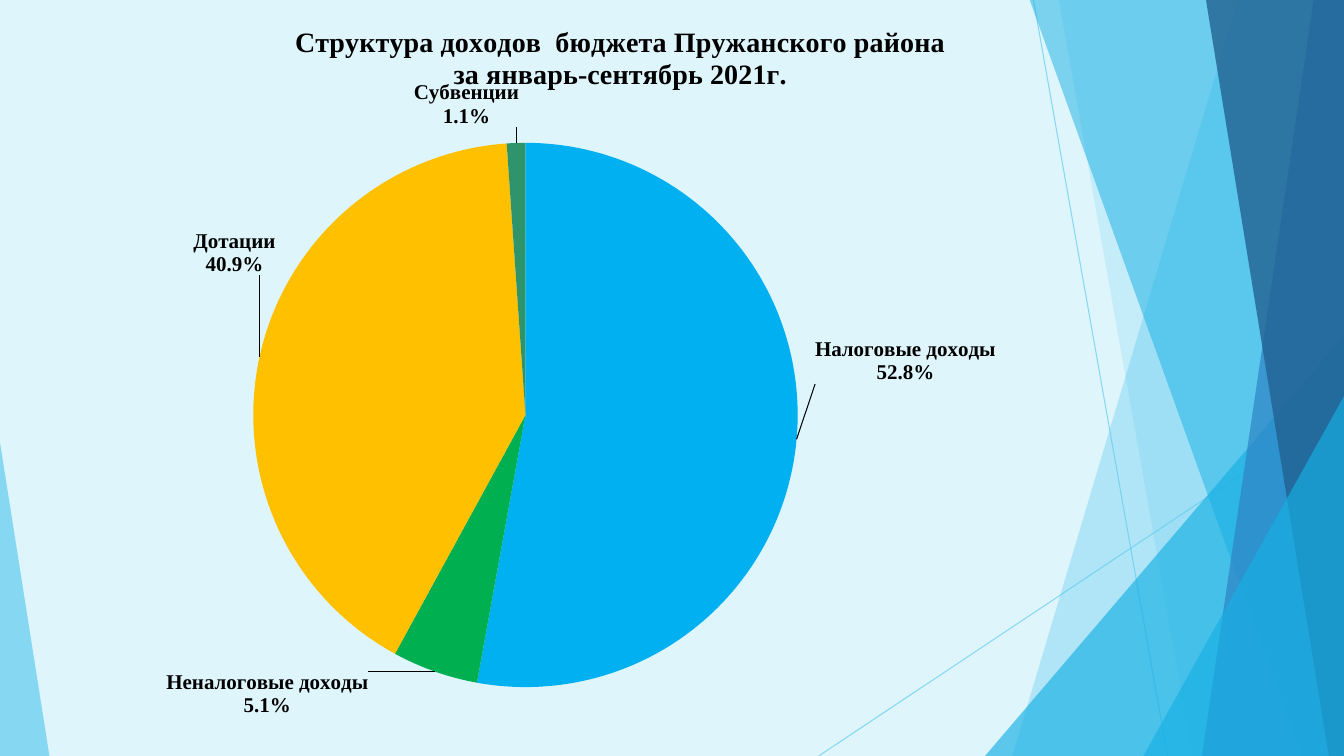
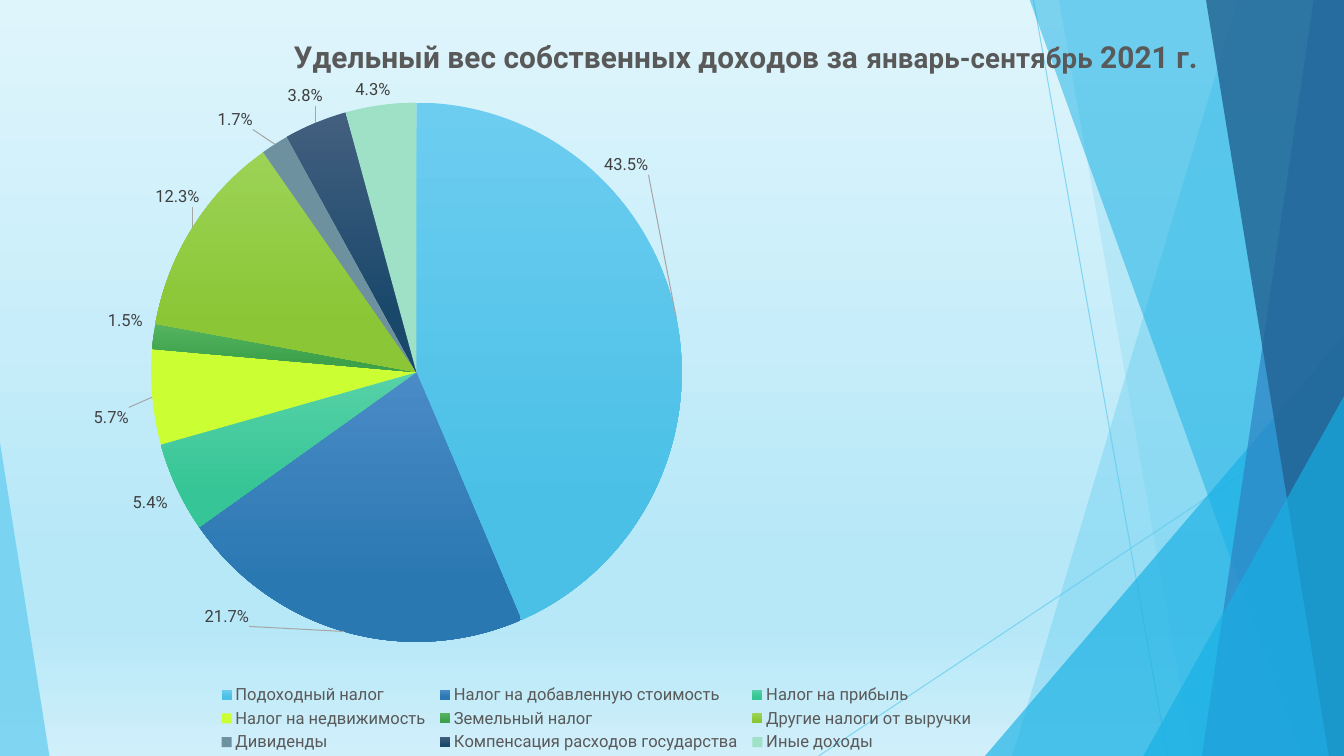
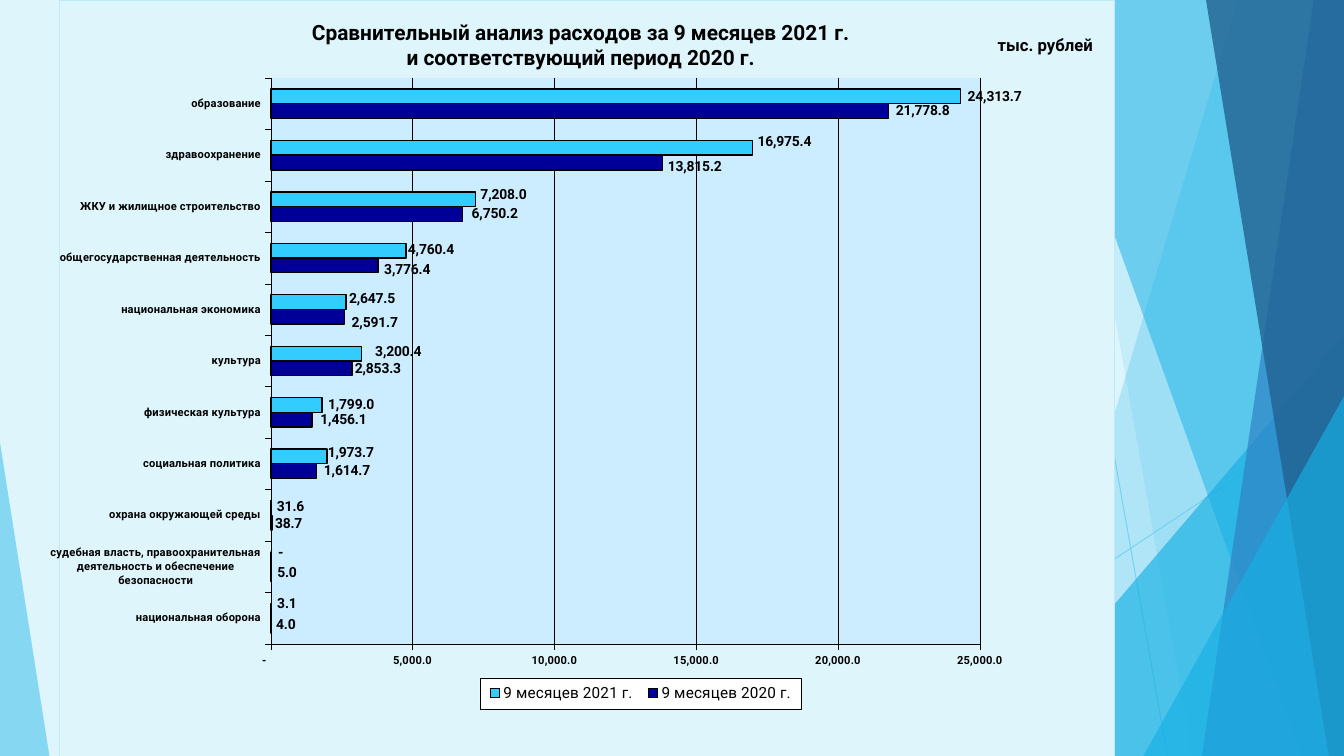
import copy
from itertools import cycle

from lxml import etree
from pptx import Presentation, util as u
from pptx.chart.data import CategoryChartData
from pptx.dml.color import RGBColor
from pptx.enum import chart as ce, shapes as se
from pptx.oxml.ns import qn

WIDE, HIGH = 13.33, 7.5
SANS, SERIF = "Roboto", "Times New Roman"
BLACK, GREY, DARK = "000000", "595959", "404040"
PALE, SKY, AQUA, BLUE, NAVY = "DFF5FC", "5FCBEF", "17B0E4", "2E83C3", "226292"
MONEY = '_(* #,##0.0_);_(* \\(#,##0.0\\);_(* "-"??_);_(@_)'
SHARE = '0.0"%"'

# top left, top right, bottom right, bottom left; colour, opacity
BANDS = [
    ((12.28, WIDE, WIDE, 10.04), SKY, 36),
    ((10.5, WIDE, WIDE, 11.83), SKY, 20),
    ((9.77, 3.33), AQUA, 66),
    ((10.21, WIDE, WIDE, 12.91), AQUA, 50),
    ((13.03, WIDE, WIDE, 11.92), BLUE, 70),
    ((11.96, WIDE, WIDE, 13.18), NAVY, 80),
    ((11.34, 3.93), AQUA, 66),
]
RAYS = [(10.25, 0, 11.58, HIGH), (WIDE, 4.03, 8.12, HIGH)]


def rgb(code):
    return RGBColor.from_string(code)


def inch(*nums):
    return [u.Inches(n) for n in nums]


def add(parent, tag, at=None, **attrs):
    node = etree.Element(qn(tag), {k: str(v) for k, v in attrs.items()})
    parent.insert(len(parent) if at is None else at, node)
    return node


def paint(fill, tone, root):
    """Fill with one colour, or with (position, colour) stops from top down."""
    if isinstance(tone, str):
        fill.solid()
        fill.fore_color.rgb = rgb(tone)
        return
    fill.gradient()
    fill.gradient_angle = 270
    stops = list(root.iter(qn("a:gsLst")))[-1]
    for old in list(stops):
        stops.remove(old)
    for pos, code in tone:
        stop = add(stops, "a:gs", pos=pos * 1000)
        add(stop, "a:srgbClr", val=code)


def fade(shape, part):
    tint = next(shape._element.spPr.iter(qn("a:srgbClr")))
    add(tint, "a:alpha", val=part * 1000)


def style(font, size=None, tone=BLACK, bold=False, face=SANS):
    font.name, font.bold = face, bold
    font.color.rgb = rgb(tone)
    if size:
        font.size = u.Pt(size)


def write(frame, words, size, **form):
    """Lines split at newline, runs at |; run sizes take turns."""
    sizes = cycle(size if isinstance(size, tuple) else (size,))
    for i, line in enumerate(words.split("\n")):
        para = frame.add_paragraph() if i else frame.paragraphs[0]
        for bit in line.split("|"):
            run = para.add_run()
            run.text = bit
            style(run.font, next(sizes), **form)


def place(node, at, mode="edge", **box):
    """Give a chart part a manual layout in shares of the chart."""
    for old in node.findall(qn("c:layout")):
        node.remove(old)
    spot = add(add(node, "c:layout", at), "c:manualLayout")
    if at == 0:
        add(spot, "c:layoutTarget", val="inner")
    if mode == "edge":
        for key in "xy":
            add(spot, f"c:{key}Mode", val="edge")
    for key, val in box.items():
        add(spot, f"c:{key}", val=val)


def box_look(after, fill, line=None):
    look = etree.Element(qn("c:spPr"))
    after.addnext(look)
    add(add(look, "a:solidFill"), "a:srgbClr", val=fill)
    edge = add(look, "a:ln", w=3175)
    if line:
        add(add(edge, "a:solidFill"), "a:srgbClr", val=line)
    else:
        add(edge, "a:noFill")


def decor(slide):
    for ray in RAYS:
        line = slide.shapes.add_connector(se.MSO_CONNECTOR.STRAIGHT, *inch(*ray))
        line.line.color.rgb = rgb(SKY)
        line.line.width = u.Pt(0.75)
        fade(line, 70)
        add(line._element.spPr, "a:effectLst")
    for edge, tone, part in BANDS:
        if len(edge) == 2:
            left, top = edge
            wedge(slide, (left, top, WIDE - left, HIGH - top), 1, tone, part)
            continue
        pts = [inch(x, y) for x, y in zip(edge, (-0.01, -0.01, HIGH, HIGH))]
        form = slide.shapes.build_freeform(*pts[0])
        form.add_line_segments(pts[1:], close=True)
        tint(form.convert_to_shape(), tone, part)
    wedge(slide, (0, 4.39, 0.49, 3.11), 0, SKY, 70)


def wedge(slide, box, tip, tone, part):
    shape = slide.shapes.add_shape(se.MSO_SHAPE.ISOSCELES_TRIANGLE, *inch(*box))
    shape.adjustments[0] = tip
    tint(shape, tone, part)


def tint(shape, tone, part):
    shape.shadow.inherit = False
    shape.line.fill.background()
    paint(shape.fill, tone, shape._element)
    fade(shape, part)


def page(deck, back):
    slide = deck.slides.add_slide(deck.slide_layouts[6])
    paint(slide.background.fill, back, slide._element)
    decor(slide)
    return slide


def graph(slide, kind, box, cats, rows, plot, face=SANS):
    data = CategoryChartData()
    data.categories = cats
    for name, vals in rows:
        data.add_series(name, vals)
    chart = slide.shapes.add_chart(kind, *inch(*box), data).chart
    style(chart.font, 12, face=face)
    chart.has_legend = False
    area = chart._chartSpace.chart.plotArea
    place(area, 0, **dict(zip("xywh", plot)))
    return chart


def title(owner, words, size, x, y, **form):
    write(owner.text_frame, words, size, bold=True, **form)
    place(owner._element, 1, x=x, y=y)


def legend(chart, spot, box, size, tone):
    chart.has_legend = True
    key = chart.legend
    key.position, key.include_in_layout = spot, False
    style(key.font, size, tone)
    place(key._element, 1, **dict(zip("xywh", box)))
    return key


def labels(ser, form, moves, lead=None, names=False, **look):
    """Label a series; moves are thousandths of the chart from the usual spot."""
    tags = ser.data_labels
    tags.number_format, tags.number_format_is_linked = form, False
    tags.position = ce.XL_LABEL_POSITION.OUTSIDE_END
    tags.show_value, tags.show_category_name = True, names
    style(tags.font, **look)
    root = tags._element
    show = root.find(qn("c:showLeaderLines"))
    if show is None:
        show = add(root, "c:showLeaderLines")
    show.set("val", "1" if lead else "0")
    if names:
        gap = etree.Element(qn("c:separator"))
        gap.text = "\n"
        show.addprevious(gap)
    parts = [n for n in root if n is not show]
    if lead:
        edge = add(add(add(root, "c:leaderLines"), "c:spPr"), "a:ln", w=9525)
        add(add(edge, "a:solidFill"), "a:srgbClr", val=lead)
    for i, (dx, dy) in enumerate(moves):
        tag = add(root, "c:dLbl", i)
        add(tag, "c:idx", val=i)
        tag.extend(copy.deepcopy(parts))
        if dx or dy:
            place(tag, 1, "factor", x=dx / 1000, y=dy / 1000)


def pie(slide, box, rows, plot, face=SANS, **look):
    """Rows hold name, value, colour and label move."""
    cats, vals, tones, moves = zip(*rows)
    chart = graph(slide, ce.XL_CHART_TYPE.PIE, box, cats, [("Series 1", vals)], plot, face)
    chart.plots[0].vary_by_categories = True
    ser = chart.plots[0].series[0]
    for i, tone in enumerate(tones):
        form = ser.points[i].format
        paint(form.fill, tone, ser._element)
        form.line.fill.background()
    labels(ser, SHARE, moves, face=face, **look)
    chart.has_title = True
    return chart


def income(deck):
    rows = [
        ("Налоговые доходы", 52.8, "00B0F0", (11, -135)),
        ("Неналоговые доходы", 5.1, "00B050", (-56, -9)),
        ("Дотации", 40.9, "FFC000", (19, -106)),
        ("Субвенции", 1.1, "2E946B", (-43, -13)),
    ]
    chart = pie(page(deck, PALE), (0.5, 0, 11.41, HIGH), rows,
                (0.141, 0.189, 0.544, 0.72), SERIF,
                lead=BLACK, names=True, size=15, bold=True)
    title(chart.chart_title, "Структура доходов  бюджета Пружанского района\n"
          "за январь-сентябрь 2021г.", 20, 0.21, 0.03, face=SERIF)


def taxes(deck):
    def mix(top, low):
        return [(0, top), (78, low)]

    rows = [
        ("Подоходный налог", 43.5, mix("6CCDF0", "4BC0E6"), (-66, -189)),
        ("Налог на добавленную стоимость", 21.7, mix("4A8BC6", "2A78B2"), (-79, -41)),
        ("Налог на прибыль", 5.4, mix("56D2A7", "36C596"), (-3, 4)),
        ("Налог на недвижимость", 5.7, "CCFF33", (-15, 13)),
        ("Земельный налог", 1.5, mix("56B461", "3CA14A"), (-4, -6)),
        ("Другие налоги от выручки", 12.3, mix("9CD356", "8AC635"), (10, -23)),
        ("Дивиденды", 1.7, "6E91A0", (-16, -13)),
        ("Компенсация расходов государства", 3.8, mix("435F7F", "19486B"), (8, -15)),
        ("Иные доходы", 4.3, "9FE1C6", (9, 1)),
    ]
    back = [(0, PALE), (74, "B7E8F8"), (83, "B7E8F8"), (100, "CFEFFA")]
    chart = pie(page(deck, back), (0, 0.05, 11.91, 7.45), rows,
                (0.116, 0.13, 0.473, 0.718), lead="A6A6A6", size=12, tone=DARK)
    title(chart.chart_title, "Удельный вес собственных доходов за |январь-сентябрь |2021 г.",
          (21.6, 20, 21.6), 0.246, 0.04, tone=GREY)
    legend(chart, ce.XL_LEGEND_POSITION.BOTTOM, (0.18, 0.9, 0.65, 0.1), 12, GREY)


def spending(deck):
    # name, 2020, 2021, label moves for 2020 and 2021
    rows = [
        ("национальная оборона", 4, 3.1, (-2, -1), (-1, -9)),
        ("судебная власть, правоохранительная деятельность и обеспечение безопасности",
         5, 0, (-1, -2), (0, -9)),
        ("охрана окружающей среды", 38.7, 31.6, (-4, 1), (-2, -2)),
        ("социальная политика", 1614.7, 1973.7, (0, 0), (-6, -5)),
        ("физическая культура", 1456.1, 1799, (1, 0), (-1, -1)),
        ("культура", 2853.3, 3200.4, (-4, 1), (6, -2)),
        ("национальная экономика", 2591.7, 2647.5, (0, 8), (-4, -4)),
        ("общегосударственная деятельность", 3776.4, 4760.4, (-1, 6), (-5, -1)),
        ("ЖКУ и жилищное строительство", 6750.2, 7208, (2, 0), (-2, -6)),
        ("здравоохранение", 13815.2, 16975.4, (-2, 5), (-2, -8)),
        ("образование", 21778.8, 24313.7, (0, 0), (0, 0)),
    ]
    cats, old, new, *moves = zip(*rows)
    years = [("9 месяцев 2020 г.", old), ("9 месяцев 2021 г.", new)]
    chart = graph(page(deck, PALE), ce.XL_CHART_TYPE.BAR_CLUSTERED, (0.5, 0, 10.55, HIGH),
                  cats, years, (0.201, 0.103, 0.672, 0.749))
    plot = chart.plots[0]
    plot.gap_width, plot.overlap, plot.vary_by_categories = 150, 0, False
    for ser, tone, move in zip(plot.series, ("000099", "33CCFF"), moves):
        paint(ser.format.fill, tone, ser._element)
        ser.format.line.color.rgb = rgb(BLACK)
        ser.format.line.width = u.Pt(1)
        labels(ser, MONEY, move, size=10, bold=True)

    scale = chart.value_axis
    scale.minimum_scale, scale.maximum_scale, scale.major_unit = 0, 25000, 5000
    scale.has_major_gridlines = True
    for axis in (scale, chart.category_axis):
        axis.major_tick_mark = ce.XL_TICK_MARK.OUTSIDE
        style(axis.tick_labels.font, 8, bold=True)
    for part in (scale, chart.category_axis, scale.major_gridlines):
        part.format.line.color.rgb = rgb(BLACK)
        part.format.line.width = u.Pt(0.25)
    ticks = scale.tick_labels
    ticks.number_format, ticks.number_format_is_linked = MONEY, False

    chart.has_title = scale.has_title = True
    title(chart.chart_title, "Сравнительный анализ расходов за 9 месяцев 2021 г.\n"
          "и соответствующий период 2020 г.", 15, 0.237, 0.02)
    title(scale.axis_title, "тыс. рублей", 12, 0.887, 0.04)
    body = next(scale.axis_title._element.iter(qn("a:bodyPr")))
    body.set("rot", "0")
    body.set("vert", "horz")
    key = legend(chart, ce.XL_LEGEND_POSITION.RIGHT, (0.399, 0.897, 0.305, 0.041), 11, BLACK)

    root = chart._chartSpace.chart
    box_look(root, PALE, "BFEAF9")
    box_look(root.plotArea[-1], "CCECFF")
    box_look(key._element.find(qn("c:overlay")), "FFFFFF", BLACK)


def main():
    deck = Presentation()
    deck.slide_width, deck.slide_height = inch(WIDE, HIGH)
    for make in (income, taxes, spending):
        make(deck)
    deck.save("out.pptx")


if __name__ == "__main__":
    main()
